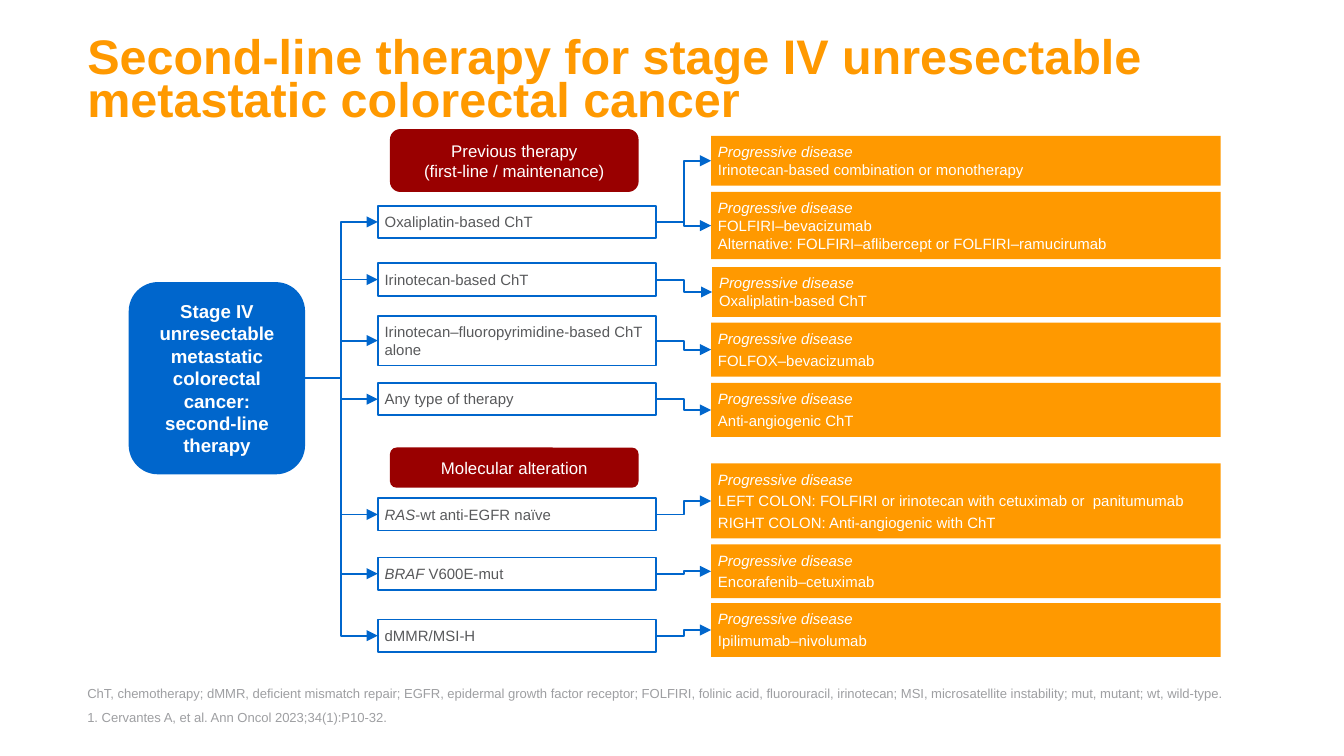
from lxml import etree
from pptx import Presentation
from pptx.dml.color import RGBColor
from pptx.enum.shapes import MSO_CONNECTOR as LINK, MSO_SHAPE as SHAPE
from pptx.enum.text import MSO_ANCHOR as ANCHOR, MSO_AUTO_SIZE as FIT, PP_ALIGN as ALIGN
from pptx.oxml.ns import qn
from pptx.util import Cm, Pt

BLUE, ORANGE, RED = "0066CC", "FF9900", "990000"
WHITE, DARK, GRAY = "FFFFFF", "58595B", "9E9FA2"


def write(shape, lines, size, color, inset=0, anchor=ANCHOR.TOP,
          align=ALIGN.LEFT, bold=False, after=0):
    """Fill a shape with paragraphs; a part ahead of "|" is set in italics."""
    frame = shape.text_frame
    frame.word_wrap = True
    frame.auto_size = FIT.NONE
    frame.vertical_anchor = anchor
    frame.margin_left = frame.margin_right = Cm(inset)
    frame.margin_top = frame.margin_bottom = Cm(inset)
    for i, line in enumerate(lines):
        para = frame.add_paragraph() if i else frame.paragraphs[0]
        head, bar, tail = line.partition("|")
        para.text = head
        if bar:
            para.add_run().text = tail
        para.alignment = align
        para.space_after = Pt(after)
        for run in para.runs:
            font = run.font
            font.name, font.size, font.bold = "Arial", Pt(size), bold
            font.color.rgb = RGBColor.from_string(color)
        para.runs[0].font.italic = bool(bar)
        # A line break needs its own size to keep the line height
        for br in para._p.findall(qn("a:br")):
            etree.SubElement(br, qn("a:rPr"), sz=str(size * 100))


def add_box(kind, left, top, width, height, fill=None, line=None, weight=1):
    box = slide.shapes.add_shape(kind, Cm(left), Cm(top), Cm(width), Cm(height))
    box.shadow.inherit = False
    if fill:
        box.fill.solid()
        box.fill.fore_color.rgb = RGBColor.from_string(fill)
    else:
        box.fill.background()
    if line:
        box.line.color.rgb = RGBColor.from_string(line)
        box.line.width = Pt(weight)
    else:
        box.line.fill.background()
    return box


deck = Presentation()
deck.slide_width, deck.slide_height = Cm(25.4), Cm(14.29)
slide = deck.slides.add_slide(deck.slide_layouts[5])

# Title
title = slide.shapes.title
title.left, title.top, title.width, title.height = Cm(1.65), Cm(0.76), Cm(22.15), Cm(1.63)
write(title, ["Second-line therapy for stage IV unresectable metastatic colorectal cancer"],
      26, ORANGE, anchor=ANCHOR.BOTTOM, bold=True)
title.text_frame.paragraphs[0].line_spacing = 0.75

# Footnotes
notes = [
    (12.42, 21.55, 0.84, ANCHOR.BOTTOM,
     "ChT, chemotherapy; dMMR, deficient mismatch repair; EGFR, epidermal growth factor "
     "receptor; FOLFIRI, folinic acid, fluorouracil, irinotecan; MSI, microsatellite "
     "instability; mut, mutant; wt, wild-type."),
    (13.41, 22.15, 0.8, ANCHOR.TOP, "1. Cervantes A, et al. Ann Oncol 2023;34(1):P10-32."),
]
for top, width, height, anchor, text in notes:
    note = slide.shapes.add_textbox(Cm(1.65), Cm(top), Cm(width), Cm(height))
    write(note, [text], 7, GRAY, anchor=anchor, after=3)

# Starting point
stage = add_box(SHAPE.ROUNDED_RECTANGLE, 2.46, 5.36, 3.28, 3.58, BLUE, BLUE, 1.5)
stage.adjustments[0] = 0.16
write(stage, ["Stage IV unresectable metastatic colorectal cancer:\vsecond-line therapy"],
      10, WHITE, 0.15, ANCHOR.MIDDLE, ALIGN.CENTER, bold=True)

# Column headings
for top, height, text in [(2.44, 1.19, "Previous therapy\v(first-line / maintenance)"),
                          (8.46, 0.76, "Molecular alteration")]:
    heading = add_box(SHAPE.ROUNDED_RECTANGLE, 7.37, top, 4.7, height, RED)
    write(heading, [text], 9, WHITE, 0.15, ANCHOR.MIDDLE, ALIGN.CENTER)

# Each case: top, height, text, then its treatments as left, top, height, lines.
# Text after \v stays in the paragraph of the status line.
STATUS = "Progressive disease"
cases = [
    (3.89, 0.61, "Oxaliplatin-based ChT", [
        (13.44, 2.57, 0.94, [STATUS + "|", "Irinotecan-based combination or monotherapy"], 0),
        (13.44, 3.63, 1.27, [STATUS + "|", "FOLFIRI–bevacizumab\vAlternative: "
                             "FOLFIRI–aflibercept or FOLFIRI–ramucirumab"], 0)]),
    (4.98, 0.61, "Irinotecan-based ChT", [
        (13.46, 5.05, 0.94, [STATUS + "|", "Oxaliplatin-based ChT"], 0)]),
    (5.97, 0.94, "Irinotecan–fluoropyrimidine-based ChT alone", [
        (13.44, 6.1, 1.02, [STATUS + "|", "FOLFOX–bevacizumab"], 2)]),
    (7.24, 0.61, "Any type of therapy", [
        (13.44, 7.24, 1.02, [STATUS + "|", "Anti-angiogenic ChT"], 2)]),
    (9.42, 0.61, "RAS|-wt anti-EGFR naïve", [
        (13.44, 8.76, 1.42, [STATUS + "|", "LEFT COLON: FOLFIRI or irinotecan with "
                             "cetuximab or  panitumumab",
                             "RIGHT COLON: Anti-angiogenic with ChT"], 2)]),
    (10.54, 0.61, "BRAF |V600E-mut", [
        (13.44, 10.29, 1.02, [STATUS + "|", "Encorafenib–cetuximab"], 2)]),
    (11.71, 0.61, "dMMR/MSI-H", [
        (13.44, 11.4, 1.02, [STATUS + "|", "Ipilimumab–nivolumab"], 2)]),
]
pairs = []
for top, height, text, options in cases:
    case = add_box(SHAPE.RECTANGLE, 7.14, top, 5.26, height, line=BLUE)
    write(case, [text], 8, DARK, 0.13)
    pairs.append((stage, case))
    for left, top, height, lines, after in options:
        option = add_box(SHAPE.RECTANGLE, left, top, 23.07 - left, height, ORANGE)
        write(option, lines, 8, WHITE, 0.13, after=after)
        pairs.append((case, option))

# Arrows from the right side of one box to the left side of the next
for start, end in pairs:
    arrow = slide.shapes.add_connector(LINK.ELBOW, 0, 0, 0, 0)
    arrow.begin_connect(start, 3)
    arrow.end_connect(end, 1)
    arrow.line.color.rgb = RGBColor.from_string(BLUE)
    arrow.line.width = Pt(1)
    etree.SubElement(arrow.line._get_or_add_ln(), qn("a:tailEnd"), type="triangle")
    etree.SubElement(arrow._element.spPr, qn("a:effectLst"))

deck.save("out.pptx")
